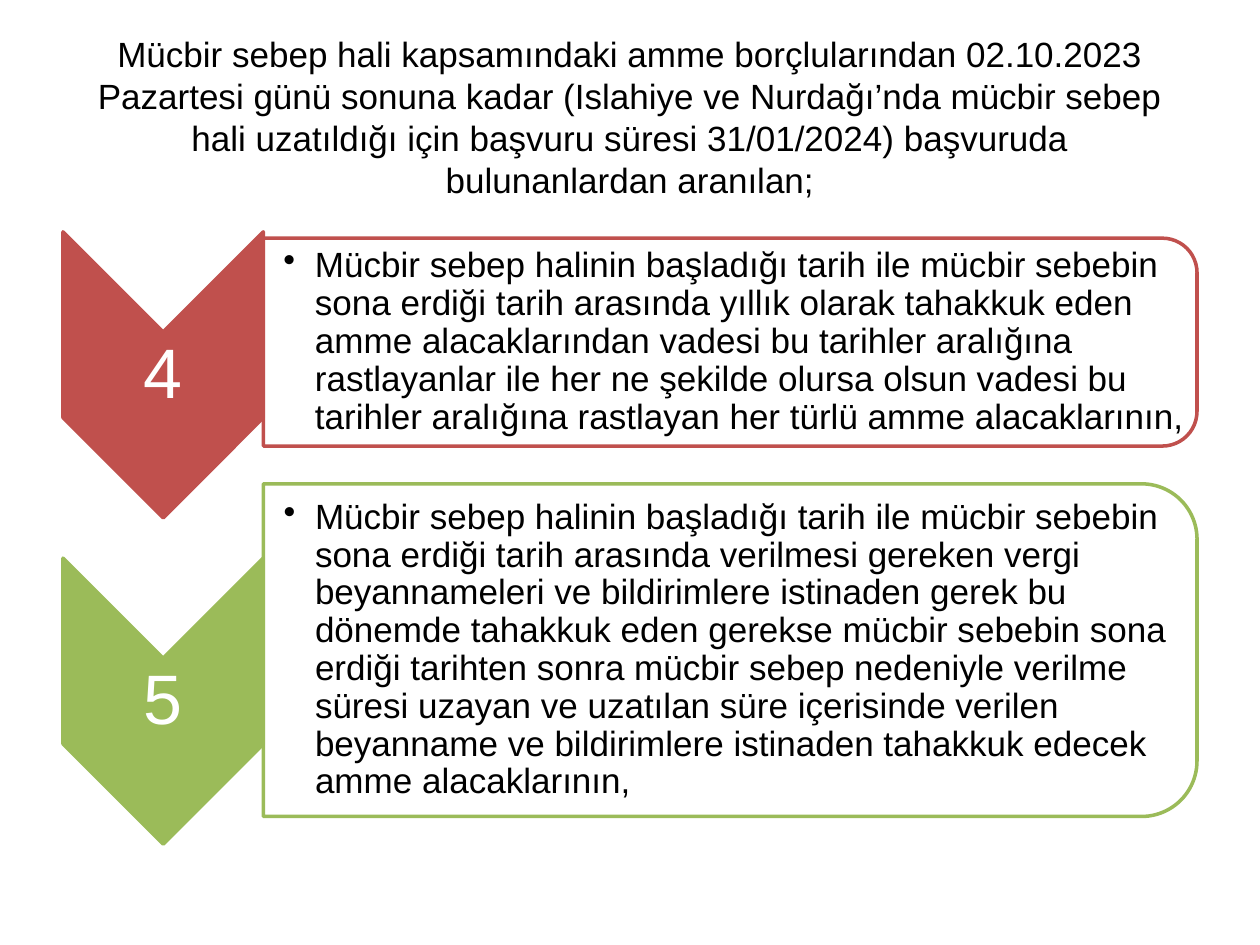
from lxml.etree import SubElement
from pptx import Presentation
from pptx.dml.color import RGBColor
from pptx.enum.shapes import MSO_SHAPE as SHAPE
from pptx.enum.text import MSO_ANCHOR as ANCHOR, PP_ALIGN as ALIGN
from pptx.oxml.ns import qn
from pptx.util import Inches, Pt

BLACK = RGBColor(0x00, 0x00, 0x00)
WHITE = RGBColor(0xFF, 0xFF, 0xFF)
RED = RGBColor(0xC0, 0x50, 0x4D)
GREEN = RGBColor(0x9B, 0xBB, 0x59)

TITLE = ("Mücbir sebep hali kapsamındaki amme borçlularından 02.10.2023 Pazartesi günü "
         "sonuna kadar (Islahiye ve Nurdağı’nda mücbir sebep hali uzatıldığı için başvuru "
         "süresi 31/01/2024) başvuruda bulunanlardan aranılan;")

# number, colour, panel top, panel height, text width, text
ITEMS = [
    ("4", RED, 1.89, 1.65, 7.33,
     "Mücbir sebep halinin başladığı tarih ile mücbir sebebin sona erdiği tarih arasında "
     "yıllık olarak tahakkuk eden amme alacaklarından vadesi bu tarihler aralığına "
     "rastlayanlar ile her ne şekilde olursa olsun vadesi bu tarihler aralığına rastlayan "
     "her türlü amme alacaklarının,"),
    ("5", GREEN, 3.84, 2.64, 7.28,
     "Mücbir sebep halinin başladığı tarih ile mücbir sebebin sona erdiği tarih arasında "
     "verilmesi gereken vergi beyannameleri ve bildirimlere istinaden gerek bu dönemde "
     "tahakkuk eden gerekse mücbir sebebin sona erdiği tarihten sonra mücbir sebep "
     "nedeniyle verilme süresi uzayan ve uzatılan süre içerisinde verilen beyanname ve "
     "bildirimlere istinaden tahakkuk edecek amme alacaklarının,"),
]

LEFT, CHEVRON_W, CHEVRON_H = 0.5, 1.59, 2.27
CHEVRON_TOP, STEP = 1.84, 2.59
LABEL_DROP, LABEL_H = 0.8, 0.68
PANEL_X, PANEL_W = LEFT + CHEVRON_W, 7.41


def add_turned(s, kind, x, y, w, h, fill, line):
    """Add a shape turned 90 degrees that covers the box x, y, w, h as seen."""
    sp = s.shapes.add_shape(kind, Inches(x + (w - h) / 2), Inches(y + (h - w) / 2),
                            Inches(h), Inches(w))
    sp.rotation = 90
    sp.shadow.inherit = False
    sp.fill.solid()
    sp.fill.fore_color.rgb = fill
    sp.line.color.rgb = line
    sp.line.width = Pt(2)
    return sp


def write(tf, text, size, color, margins, **paragraph_format):
    names = ("margin_left", "margin_top", "margin_right", "margin_bottom")
    for name, value in zip(names, margins):
        setattr(tf, name, Inches(value))
    tf.word_wrap = True
    tf.vertical_anchor = ANCHOR.MIDDLE
    p = tf.paragraphs[0]
    for name, value in paragraph_format.items():
        setattr(p, name, value)
    r = p.add_run()
    r.text = text
    r.font.name, r.font.size = "Arial", Pt(size)
    r.font.color.rgb = color
    return p


def add_text(s, x, y, w, h, *args, **paragraph_format):
    box = s.shapes.add_textbox(Inches(x), Inches(y), Inches(w), Inches(h))
    return write(box.text_frame, *args, line_spacing=0.9, **paragraph_format)


def add_bullet(p):
    pPr = p._p.get_or_add_pPr()
    pPr.set("marL", str(Inches(0.25)))
    pPr.set("indent", str(-Inches(0.25)))
    SubElement(pPr, qn("a:buChar")).set("char", "•")


prs = Presentation()
prs.slide_width, prs.slide_height = Inches(10), Inches(7.5)
s = prs.slides.add_slide(prs.slide_layouts[5])

title = s.shapes.title
title.left, title.top, title.width, title.height = map(Inches, (0.5, 0.3, 9, 1.25))
write(title.text_frame, TITLE, 20, BLACK, (0.1, 0.05, 0.1, 0.05), alignment=ALIGN.CENTER)

for i, (number, color, top, height, text_w, text) in enumerate(ITEMS):
    y = CHEVRON_TOP + i * STEP
    add_turned(s, SHAPE.CHEVRON, LEFT, y, CHEVRON_W, CHEVRON_H, color, color)
    add_text(s, LEFT, y + LABEL_DROP, CHEVRON_W, LABEL_H, number, 40, WHITE,
             (0.03,) * 4, alignment=ALIGN.CENTER)

    panel = add_turned(s, SHAPE.ROUND_2_SAME_RECTANGLE, PANEL_X, top, PANEL_W, height,
                       WHITE, color)
    rgb = panel.fill._xPr.find(qn("a:solidFill")).find(qn("a:srgbClr"))
    SubElement(rgb, qn("a:alpha")).set("val", "90000")
    inset = (PANEL_W - text_w)  # keeps the text clear of the rounded corners
    p = add_text(s, PANEL_X, top + inset, text_w, height - 2 * inset, text, 20, BLACK,
                 (0.16, 0.01, 0.01, 0.01), alignment=ALIGN.LEFT)
    add_bullet(p)

prs.save("out.pptx")
